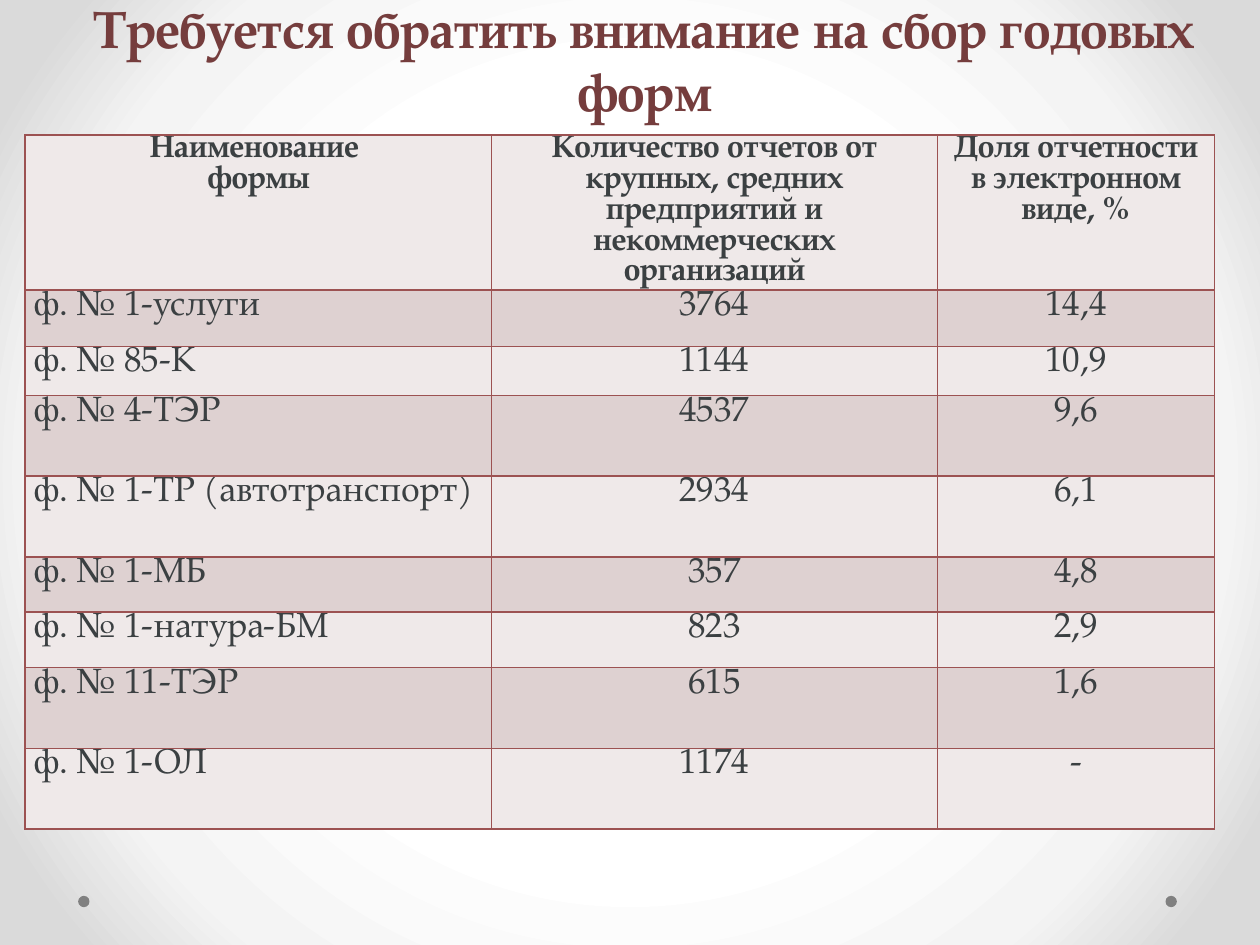
from lxml.etree import SubElement
from pptx import Presentation
from pptx.dml.color import RGBColor
from pptx.enum.shapes import MSO_SHAPE
from pptx.enum.text import MSO_ANCHOR, MSO_AUTO_SIZE, PP_ALIGN
from pptx.oxml import parse_xml
from pptx.oxml.ns import nsdecls, qn
from pptx.util import Inches, Pt

FONT = "TeX Gyre Pagella"
SLIDE_WIDTH, SLIDE_HEIGHT = 10, 7.5
TITLE_COLOR, TEXT_COLOR, BORDER_COLOR, DOT_COLOR = "753D3D", "3B4042", "9C5252", "808080"
BAND_COLORS = ("EFE9E9", "DED1D1")
BACKGROUND_STOPS = ((50, "FFFFFF"), (76, "F4F4F4"), (92, "DADADA"))
COLUMN_WIDTHS = (3.7, 3.54, 2.2)
ROW_HEIGHTS = (1.23, 0.45, 0.39, 0.64, 0.64, 0.44, 0.44, 0.64, 0.64)
TITLE = "Требуется обратить внимание на сбор годовых форм"
ROWS = (
    (
        "Наименование \vформы",
        "Количество отчетов от крупных, средних предприятий и некоммерческих организаций",
        "Доля отчетности в электронном виде, %",
    ),
    ("ф. № 1-услуги", "3764", "14,4"),
    ("ф. № 85-К", "1144", "10,9"),
    ("ф. № 4-ТЭР", "4537", "9,6"),
    ("ф. № 1-ТР (автотранспорт)", "2934", "6,1"),
    ("ф. № 1-МБ", "357", "4,8"),
    ("ф. № 1-натура-БМ", "823", "2,9"),
    ("ф. № 11-ТЭР", "615", "1,6"),
    ("ф. № 1-ОЛ", "1174", "-"),
)


def color(value):
    return RGBColor.from_string(value)


def write_text(text_frame, text, size, text_color, bold=False,
               alignment=PP_ALIGN.CENTER):
    paragraph = text_frame.paragraphs[0]
    paragraph.text = text
    paragraph.alignment = alignment
    paragraph.line_spacing = 1.0
    paragraph.space_before = paragraph.space_after = Pt(0)
    for run in paragraph.runs:
        run.font.name = FONT
        run.font.size = Pt(size)
        run.font.bold = bold
        run.font.color.rgb = color(text_color)


def set_background(slide):
    slide.background.fill.solid()
    properties = slide.background.fill._xPr
    stops = "".join(
        f'<a:gs pos="{position * 1000}"><a:srgbClr val="{value}"/></a:gs>'
        for position, value in BACKGROUND_STOPS
    )
    gradient = parse_xml(
        f'<a:gradFill {nsdecls("a")} rotWithShape="1"><a:gsLst>{stops}</a:gsLst>'
        '<a:path path="circle"><a:fillToRect l="50000" t="50000" r="50000" b="50000"/>'
        "</a:path></a:gradFill>"
    )
    properties.replace(properties.find(qn("a:solidFill")), gradient)


def add_dot(slide, left):
    diameter = Inches(0.09)
    dot = slide.shapes.add_shape(
        MSO_SHAPE.OVAL, Inches(left), Inches(7.11), diameter, diameter
    )
    dot.shadow.inherit = False
    dot.fill.solid()
    dot.fill.fore_color.rgb = color(DOT_COLOR)
    dot.line.fill.background()


def format_title(slide):
    title = slide.shapes.title
    title.left, title.top = Inches(0.43), Inches(0.21)
    title.width, title.height = Inches(9.37), Inches(0.81)
    text_frame = title.text_frame
    text_frame.auto_size = MSO_AUTO_SIZE.NONE
    text_frame.word_wrap = True
    text_frame.vertical_anchor = MSO_ANCHOR.BOTTOM
    text_frame.margin_bottom = Inches(0.05)
    write_text(text_frame, TITLE, 30, TITLE_COLOR, bold=True)


def add_borders(cell):
    properties = cell._tc.get_or_add_tcPr()
    for position, side in enumerate(("lnL", "lnR", "lnT", "lnB")):
        line = SubElement(properties, qn(f"a:{side}"), w=str(Pt(1)))
        fill = SubElement(line, qn("a:solidFill"))
        SubElement(fill, qn("a:srgbClr"), val=BORDER_COLOR)
        properties.insert(position, line)


def format_cell(cell, text, row, column):
    cell.margin_left = cell.margin_right = Inches(0.07)
    cell.margin_top = cell.margin_bottom = 0
    cell.fill.solid()
    cell.fill.fore_color.rgb = color(BAND_COLORS[row % 2])
    header = row == 0
    write_text(
        cell.text_frame, text, 18 if header else 20, TEXT_COLOR, bold=header,
        alignment=PP_ALIGN.CENTER if header or column else PP_ALIGN.LEFT,
    )
    add_borders(cell)


def add_forms_table(slide):
    table = slide.shapes.add_table(
        len(ROWS), len(COLUMN_WIDTHS), Inches(0.2), Inches(1.07),
        Inches(sum(COLUMN_WIDTHS)), Inches(sum(ROW_HEIGHTS)),
    ).table
    for column, width in zip(table.columns, COLUMN_WIDTHS):
        column.width = Inches(width)
    for row, height in zip(table.rows, ROW_HEIGHTS):
        row.height = Inches(height)
    for row, texts in enumerate(ROWS):
        for column, text in enumerate(texts):
            format_cell(table.cell(row, column), text, row, column)


def main():
    presentation = Presentation()
    presentation.slide_width = Inches(SLIDE_WIDTH)
    presentation.slide_height = Inches(SLIDE_HEIGHT)
    slide = presentation.slides.add_slide(presentation.slide_layouts[5])
    set_background(slide)
    for left in (9.25, 0.62):
        add_dot(slide, left)
    format_title(slide)
    add_forms_table(slide)
    presentation.save("out.pptx")


if __name__ == "__main__":
    main()
